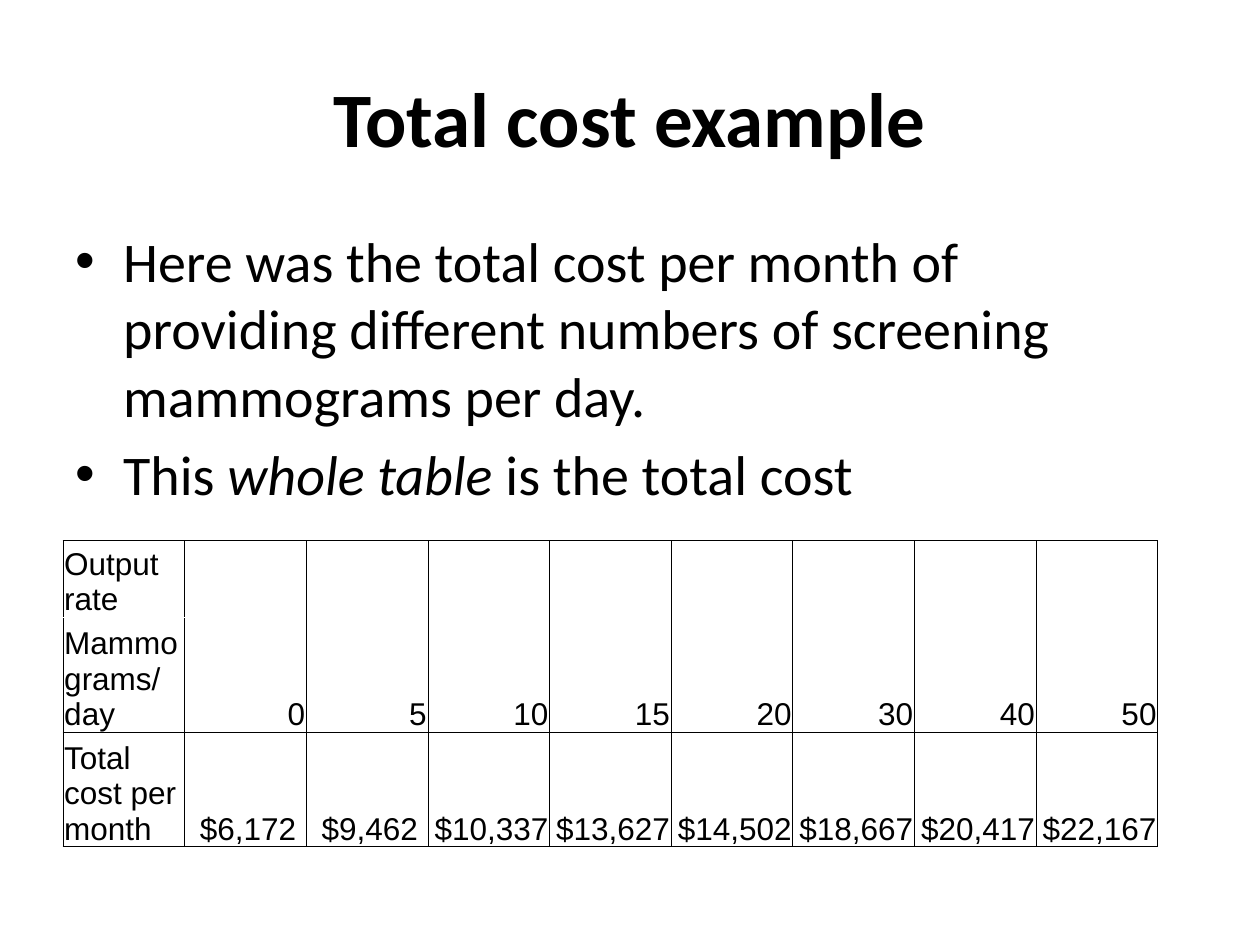
from lxml.etree import SubElement
from pptx import Presentation
from pptx.dml.color import RGBColor
from pptx.enum.text import MSO_ANCHOR, PP_ALIGN
from pptx.oxml import parse_xml
from pptx.oxml.ns import nsdecls, qn
from pptx.util import Inches, Pt

COLORS = {"text": "000000", "border": "000000", "background": "FFFFFF"}
TITLE = "Total cost example"
BULLETS = [
    [("Here was the total cost per month of providing different numbers "
      "of screening mammograms per day.", False)],
    [("This ", False), ("whole table", True), (" is the total cost", False)],
]
ROW_LABELS = ["Output rate\u00a0", "Mammograms/day", "Total cost per month"]
COSTS = [
    (0, "$6,172 "), (5, "$9,462 "), (10, "$10,337 "), (15, "$13,627 "),
    (20, "$14,502 "), (30, "$18,667 "), (40, "$20,417 "), (50, "$22,167 "),
]
ROW_HEIGHTS = [0.36, 0.68, 0.68]
TABLE_WIDTH = 8.69
MARGIN = 0.5
CONTENT_WIDTH = 10 - 2 * MARGIN


def style_font(paragraph, name, size, bold=False):
    paragraph.font.name = name
    paragraph.font.size = Pt(size)
    paragraph.font.bold = bold
    paragraph.font.color.rgb = RGBColor.from_string(COLORS["text"])


def add_text_box(slide, top, height):
    box = slide.shapes.add_textbox(
        Inches(MARGIN), Inches(top), Inches(CONTENT_WIDTH), Inches(height))
    box.text_frame.word_wrap = True
    return box.text_frame


def add_bullet(paragraph):
    properties = paragraph._p.get_or_add_pPr()
    properties.set("marL", str(Inches(0.38)))
    properties.set("indent", str(-Inches(0.38)))
    paragraph.space_before = Pt(6.4)
    SubElement(properties, qn("a:buFont")).set("typeface", "Arial")
    SubElement(properties, qn("a:buChar")).set("char", "•")


def set_borders(cell, sides):
    properties = cell._tc.get_or_add_tcPr()
    for position, side in enumerate(sides):
        properties.insert(position, parse_xml(
            f'<a:ln{side} {nsdecls("a")} w="{Pt(0.5)}"><a:solidFill>'
            f'<a:srgbClr val="{COLORS["border"]}"/></a:solidFill></a:ln{side}>'))


def fill_cell(cell, text, alignment):
    cell.margin_left = cell.margin_right = cell.margin_top = Inches(0.01)
    cell.margin_bottom = 0
    cell.vertical_anchor = MSO_ANCHOR.BOTTOM
    paragraph = cell.text_frame.paragraphs[0]
    paragraph.add_run().text = str(text)
    paragraph.alignment = alignment
    style_font(paragraph, "Arial", 18)


def add_cost_table(slide):
    row_count, column_count = len(ROW_LABELS), len(COSTS) + 1
    table = slide.shapes.add_table(
        row_count, column_count, Inches(MARGIN), Inches(4.29),
        Inches(TABLE_WIDTH), Inches(sum(ROW_HEIGHTS))).table
    table.first_row = table.horz_banding = False
    for column in table.columns:
        column.width = Inches(TABLE_WIDTH / column_count)
    for row, height in zip(table.rows, ROW_HEIGHTS):
        row.height = Inches(height)
    for row, label in enumerate(ROW_LABELS):
        fill_cell(table.cell(row, 0), label, PP_ALIGN.LEFT)
    for column, (rate, cost) in enumerate(COSTS, start=1):
        table.cell(0, column).merge(table.cell(1, column))
        fill_cell(table.cell(0, column), rate, PP_ALIGN.RIGHT)
        fill_cell(table.cell(2, column), cost, PP_ALIGN.RIGHT)
    open_sides = {(0, 0): "LRT", (1, 0): "LRB"}
    for row in range(row_count):
        for column in range(column_count):
            cell = table.cell(row, column)
            cell.fill.background()
            set_borders(cell, open_sides.get((row, column), "LRTB"))


def main():
    presentation = Presentation()
    presentation.slide_width, presentation.slide_height = Inches(10), Inches(7.5)
    slide = presentation.slides.add_slide(presentation.slide_layouts[6])
    slide.background.fill.solid()
    slide.background.fill.fore_color.rgb = RGBColor.from_string(COLORS["background"])

    title_frame = add_text_box(slide, 0.3, 1.25)
    title_frame.vertical_anchor = MSO_ANCHOR.MIDDLE
    title = title_frame.paragraphs[0]
    title.add_run().text = TITLE
    title.alignment = PP_ALIGN.CENTER
    style_font(title, "Calibri", 44, bold=True)

    body_frame = add_text_box(slide, 1.75, 2.31)
    for index, runs in enumerate(BULLETS):
        paragraph = body_frame.add_paragraph() if index else body_frame.paragraphs[0]
        add_bullet(paragraph)
        style_font(paragraph, "Calibri", 32)
        for text, italic in runs:
            run = paragraph.add_run()
            run.text = text
            run.font.italic = italic

    add_cost_table(slide)
    presentation.save("out.pptx")


if __name__ == "__main__":
    main()
